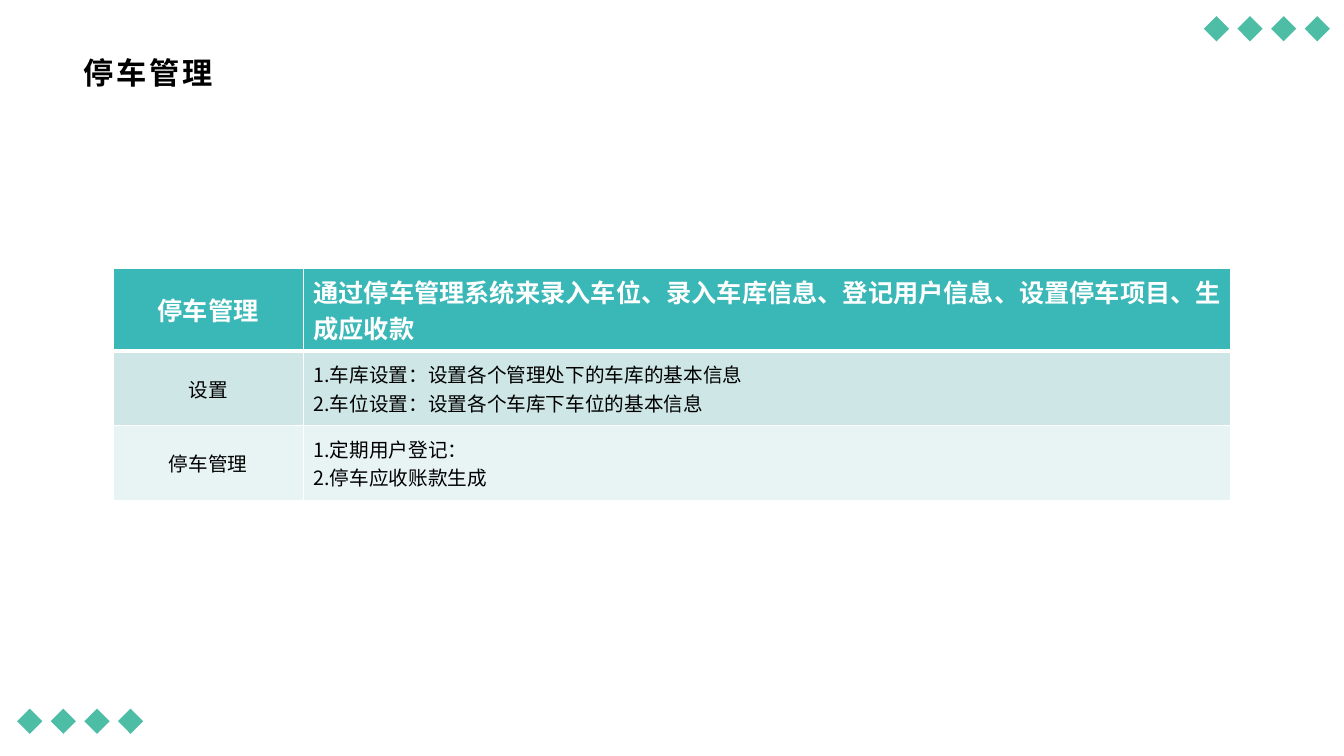
from dataclasses import dataclass

from lxml.etree import SubElement
from pptx import Presentation
from pptx.dml.color import RGBColor
from pptx.enum.shapes import MSO_SHAPE
from pptx.enum.text import MSO_ANCHOR, MSO_AUTO_SIZE, PP_ALIGN
from pptx.oxml.ns import qn
from pptx.util import Inches, Pt

# Content
TITLE = "停车管理"
ROWS = [
    ("停车管理", ["通过停车管理系统来录入车位、录入车库信息、登记用户信息、设置停车项目、生成应收款"]),
    ("设置", ["1.车库设置：设置各个管理处下的车库的基本信息", "2.车位设置：设置各个车库下车位的基本信息"]),
    ("停车管理", ["1.定期用户登记：", "2.停车应收账款生成"]),
]


@dataclass(frozen=True)
class Theme:
    latin: str = "Arial"
    chinese: str = "Noto Sans CJK SC"
    black: str = "000000"
    white: str = "FFFFFF"
    diamond: str = "4EBDA5"
    row_fills: tuple = ("3AB7B7", "CEE6E6", "E8F3F3")
    title_size: float = 21.6
    header_size: float = 18
    body_size: float = 14
    thin_line: float = 1
    header_line: float = 3


THEME = Theme()

# Layout in inches
WIDTH, HEIGHT = 13.33, 7.5
TITLE_BOX = (0.73, 0.48, 11.87, 0.48)
TABLE_LEFT, TABLE_TOP = 1.12, 2.66
COLUMN_WIDTHS = (1.89, 9.2)
ROW_HEIGHTS = (0.8, 0.74, 0.74)
DIAMOND_SIZE, DIAMOND_STEP, DIAMOND_COUNT = 0.25, 1 / 3, 4
DIAMOND_STARTS = ((0.17, 7.03), (11.94, 0.16))


def style_paragraph(para, latin, size, color, bold, align, spacing=0):
    para.alignment = align
    font = para.font
    font.name, font.size, font.bold = latin, Pt(size), bold
    font.color.rgb = RGBColor.from_string(color)
    properties = para._p.pPr.find(qn("a:defRPr"))
    SubElement(properties, qn("a:ea"), typeface=THEME.chinese)
    if spacing:
        properties.set("spc", str(spacing * 100))


def add_border(cell, side, points):
    line = SubElement(cell._tc.get_or_add_tcPr(), qn(f"a:ln{side}"), w=str(Pt(points)))
    fill = SubElement(line, qn("a:solidFill"))
    SubElement(fill, qn("a:srgbClr"), val=THEME.white)


def fill_cell(cell, lines, row_index, latin, align):
    header = row_index == 0
    thick_side = {0: "B", 1: "T"}.get(row_index)
    for side in "LRTB":
        add_border(cell, side, THEME.header_line if side == thick_side else THEME.thin_line)
    cell.fill.solid()
    cell.fill.fore_color.rgb = RGBColor.from_string(THEME.row_fills[row_index])
    cell.vertical_anchor = MSO_ANCHOR.MIDDLE
    cell.text_frame.text = "\n".join(lines)
    size = THEME.header_size if header else THEME.body_size
    color = THEME.white if header else THEME.black
    for para in cell.text_frame.paragraphs:
        style_paragraph(para, latin, size, color, header, align)


def add_diamonds(page):
    for left, top in DIAMOND_STARTS:
        for index in range(DIAMOND_COUNT):
            diamond = page.shapes.add_shape(
                MSO_SHAPE.DIAMOND, Inches(left + index * DIAMOND_STEP), Inches(top),
                Inches(DIAMOND_SIZE), Inches(DIAMOND_SIZE))
            diamond.shadow.inherit = False
            diamond.fill.solid()
            diamond.fill.fore_color.rgb = RGBColor.from_string(THEME.diamond)
            diamond.line.fill.background()


def add_title(page):
    title = page.shapes.title
    title.left, title.top, title.width, title.height = map(Inches, TITLE_BOX)
    frame = title.text_frame
    frame.text = TITLE
    frame.auto_size = MSO_AUTO_SIZE.NONE
    frame.vertical_anchor = MSO_ANCHOR.MIDDLE
    style_paragraph(frame.paragraphs[0], THEME.latin, THEME.title_size,
                    THEME.black, True, PP_ALIGN.LEFT, spacing=2)


def add_parking_table(page):
    table = page.shapes.add_table(
        len(ROWS), len(COLUMN_WIDTHS), Inches(TABLE_LEFT), Inches(TABLE_TOP),
        Inches(sum(COLUMN_WIDTHS)), Inches(sum(ROW_HEIGHTS))).table
    for column, width in zip(table.columns, COLUMN_WIDTHS):
        column.width = Inches(width)
    for index, (label, details) in enumerate(ROWS):
        table.rows[index].height = Inches(ROW_HEIGHTS[index])
        label_font = THEME.latin if index == 0 else THEME.chinese
        fill_cell(table.cell(index, 0), [label], index, label_font, PP_ALIGN.CENTER)
        fill_cell(table.cell(index, 1), details, index, THEME.chinese, PP_ALIGN.LEFT)


def main():
    deck = Presentation()
    deck.slide_width, deck.slide_height = Inches(WIDTH), Inches(HEIGHT)
    page = deck.slides.add_slide(deck.slide_layouts[5])  # title only
    add_diamonds(page)
    add_title(page)
    add_parking_table(page)
    deck.save("out.pptx")


if __name__ == "__main__":
    main()
